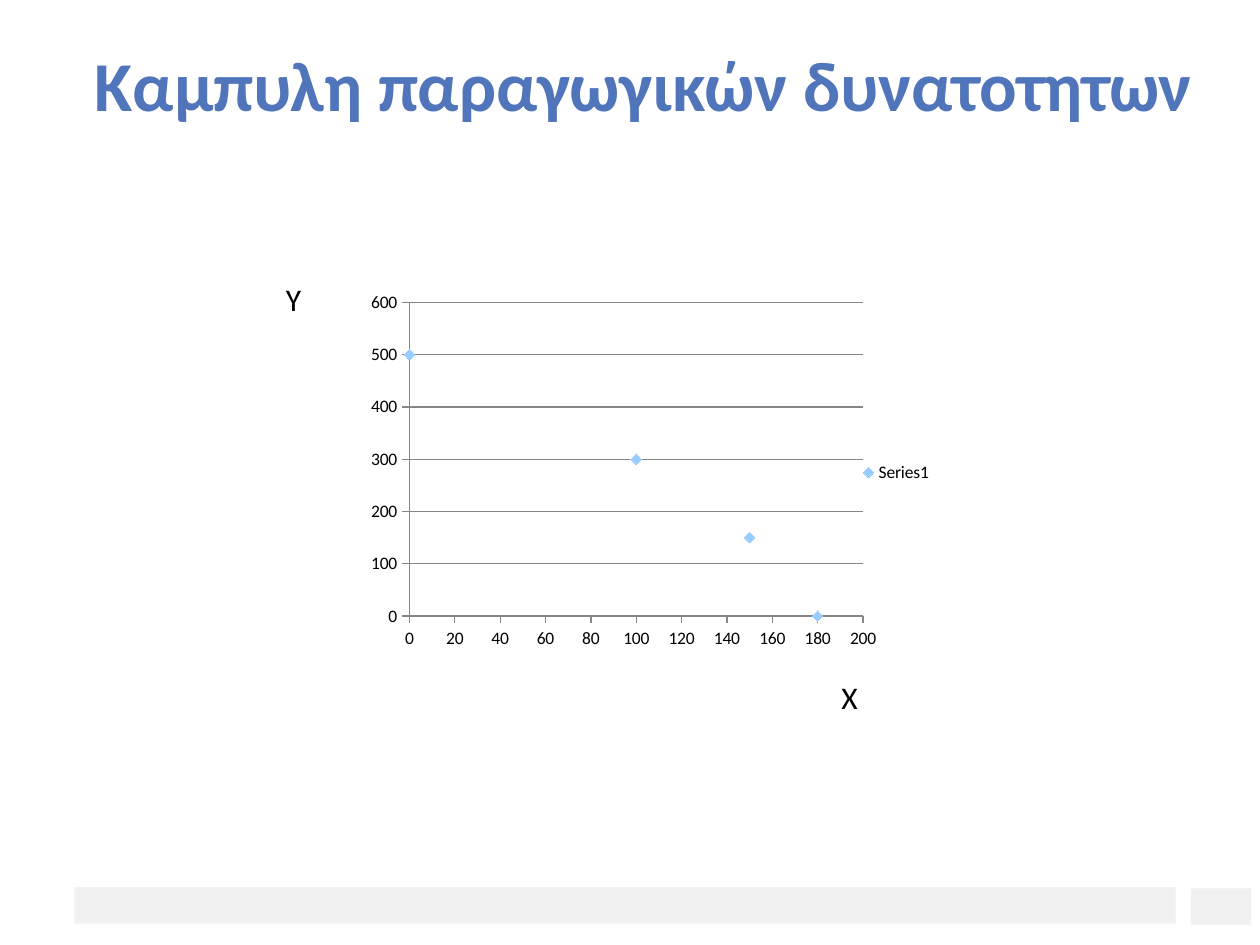
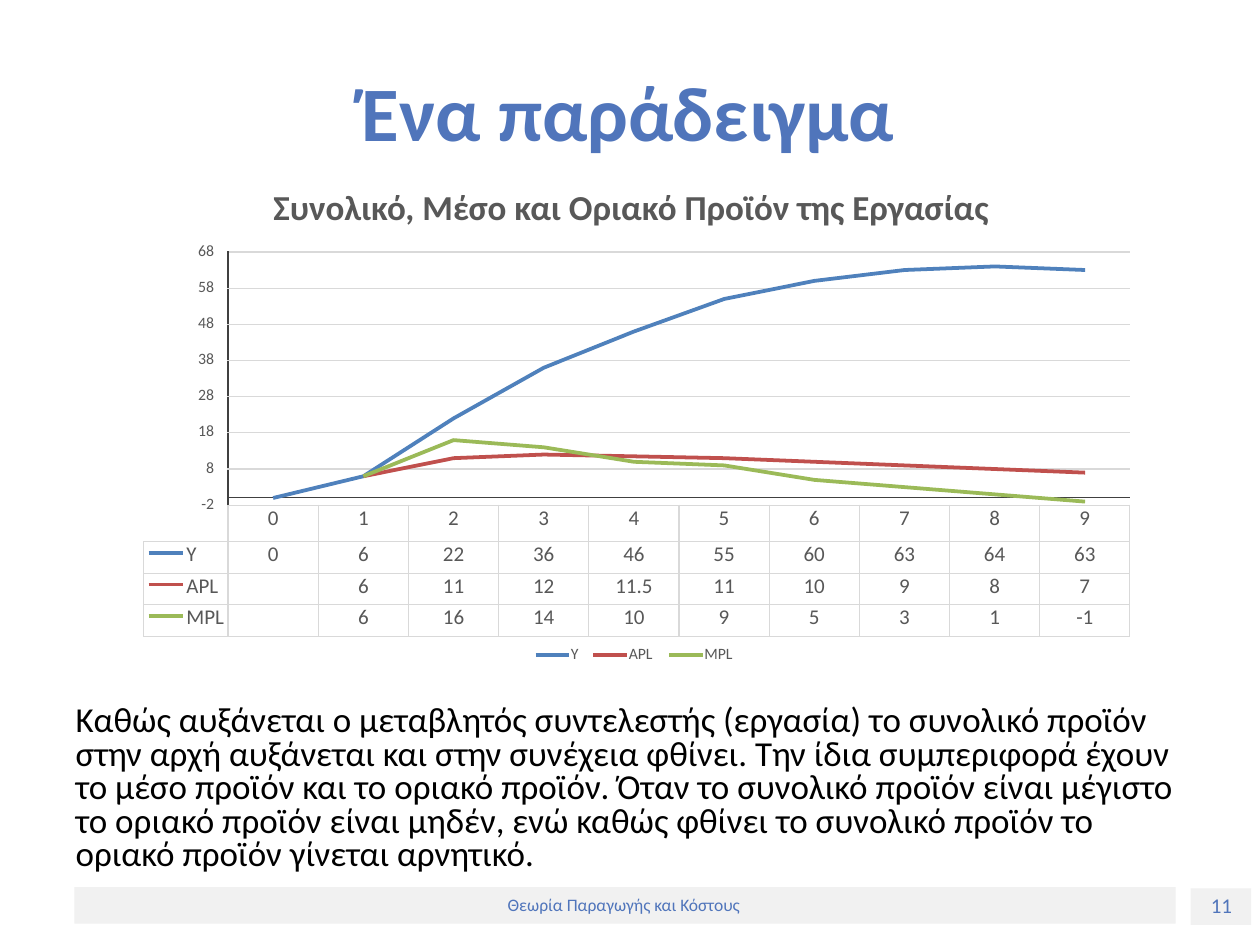
from dataclasses import dataclass

import lxml.etree
import pptx
import pptx.chart.data
import pptx.dml.color
import pptx.enum.chart
import pptx.enum.shapes
import pptx.enum.text
import pptx.oxml.ns
import pptx.util

PX = 9144
FONT = "Calibri"
ACCENT = "5075BB"
BLACK = "000000"
GRAY_TEXT = "585858"
BAND = "F1F1F1"
GRID = "D9D9D9"
AXIS = "404040"
CHART_GRID = "868686"
MARKER = "99CCFF"
CURVE_WIDTH = 2.16

LEFT = pptx.enum.text.PP_ALIGN.LEFT
CENTER = pptx.enum.text.PP_ALIGN.CENTER
RIGHT = pptx.enum.text.PP_ALIGN.RIGHT

TABLE_LEFT, TABLE_TOP = 114, 200
NAME_WIDTH, PLOT_WIDTH, PLOT_HEIGHT = 67, 716, 201
HEADER_HEIGHT, VALUE_HEIGHT = 29, 25
AXIS_MAX, AXIS_MIN, AXIS_STEP = 68, -2, 10
BAND_UNITS = [10] * 6 + [8, 2]
LABOUR = range(10)
PITCH = PLOT_WIDTH * PX // len(LABOUR)
UNIT = PLOT_HEIGHT * PX // (AXIS_MAX - AXIS_MIN)
NO_STYLE = "{2D5ABB26-0587-4C30-8999-92F81FD0307C}"


@dataclass(frozen=True)
class Box:
    left: int
    top: int
    width: int
    height: int

    def emu(self) -> tuple[int, int, int, int]:
        return self.left * PX, self.top * PX, self.width * PX, self.height * PX


@dataclass(frozen=True)
class Label:
    text: str
    box: Box
    size: int
    color: str
    bold: bool = False
    wrap: bool = False
    align: pptx.enum.text.PP_ALIGN = LEFT
    inset_x: int = 0
    inset_top: int = 1
    before: float = 1
    spacing: float | pptx.util.Length | None = None


@dataclass(frozen=True)
class Product:
    name: str
    color: str
    legend_left: int
    legend_width: int
    values: tuple[float | None, ...]


BANDS = [Box(945, 705, 48, 29), Box(59, 704, 874, 29)]

POSSIBILITIES_TITLE = Label("Καμπυλη παραγωγικών δυνατοτητων", Box(75, 33, 1000, 67), 40, ACCENT,
                            bold=True, wrap=True, inset_top=0, before=0)
AXIS_NAMES = [
    Label("Υ", Box(217, 217, 58, 40), 18, BLACK, wrap=True, inset_x=10, inset_top=5, before=0),
    Label("Χ", Box(658, 533, 92, 40), 18, BLACK, wrap=True, inset_x=10, inset_top=5, before=0),
]
POSSIBILITIES = [(0, 500), (100, 300), (150, 150), (180, 0)]

EXAMPLE_TITLE = Label("Ένα παράδειγμα", Box(287, 50, 426, 76), 44, ACCENT, bold=True)
EXAMPLE_LABELS = [
    Label("Συνολικό, Μέσο και Οριακό Προϊόν της Εργασίας", Box(217, 146, 570, 36), 20,
          GRAY_TEXT, bold=True),
    Label("Καθώς αυξάνεται ο μεταβλητός συντελεστής (εργασία) το συνολικό προϊόν "
          "στην αρχή αυξάνεται και στην συνέχεια φθίνει. Την ίδια συμπεριφορά έχουν "
          "το μέσο προϊόν και το οριακό προϊόν. Όταν το συνολικό προϊόν είναι μέγιστο "
          "το οριακό προϊόν είναι μηδέν, ενώ καθώς φθίνει το συνολικό προϊόν το "
          "οριακό προϊόν γίνεται αρνητικό.",
          Box(60, 552, 876, 143), 20, BLACK, wrap=True, inset_top=8, before=5.8, spacing=0.8),
    Label("\n".join(str(tick) for tick in range(AXIS_MAX, AXIS_MIN - 1, -AXIS_STEP)),
          Box(150, 190, 20, 220), 9, GRAY_TEXT, wrap=True, align=RIGHT, before=9.8),
    Label("11", Box(961, 711, 16, 20), 12, ACCENT, inset_top=0, before=0,
          spacing=pptx.util.Pt(12.4)),
    Label("Θεωρία Παραγωγής και Κόστους", Box(403, 712, 187, 17), 10, ACCENT, inset_top=0,
          before=0, spacing=pptx.util.Pt(10.4)),
]
PRODUCTS = [
    Product("Y", "4F81BC", 425, 9, (0, 6, 22, 36, 46, 55, 60, 63, 64, 63)),
    Product("APL", "C0504D", 471, 22, (None, 6, 11, 12, 11.5, 11, 10, 9, 8, 7)),
    Product("MPL", "9BBA58", 531, 25, (None, 6, 16, 14, 10, 9, 5, 3, 1, -1)),
]


def rgb(color: str) -> pptx.dml.color.RGBColor:
    return pptx.dml.color.RGBColor.from_string(color)


def style_line(line, color: str, width: float) -> None:
    line.color.rgb = rgb(color)
    line.width = pptx.util.Pt(width)


def style_font(font, size: float, color: str, bold: bool = False) -> None:
    font.name = FONT
    font.size = pptx.util.Pt(size)
    font.bold = bold
    font.color.rgb = rgb(color)


def write_label(shape, label: Label) -> None:
    shape.left, shape.top, shape.width, shape.height = label.box.emu()
    frame = shape.text_frame
    frame.text = label.text
    frame.word_wrap = label.wrap
    frame.auto_size = pptx.enum.text.MSO_AUTO_SIZE.NONE
    frame.vertical_anchor = pptx.enum.text.MSO_ANCHOR.TOP
    frame.margin_left = frame.margin_right = label.inset_x * PX
    frame.margin_top = label.inset_top * PX
    frame.margin_bottom = 0
    for index, para in enumerate(frame.paragraphs):
        para.alignment = label.align
        para.space_before = pptx.util.Pt(label.before if index or label.before < 9 else 1)
        para.line_spacing = label.spacing
        for span in para.runs:
            style_font(span.font, label.size, label.color, label.bold)


def add_label(page, label: Label) -> None:
    write_label(page.shapes.add_textbox(*label.box.emu()), label)


def add_page(deck, title: Label):
    page = deck.slides.add_slide(deck.slide_layouts[5])
    write_label(page.shapes.title, title)
    for box in BANDS:
        band = page.shapes.add_shape(pptx.enum.shapes.MSO_SHAPE.RECTANGLE, *box.emu())
        band.shadow.inherit = False
        band.fill.solid()
        band.fill.fore_color.rgb = rgb(BAND)
        band.line.fill.background()
    return page


def add_possibilities_chart(page) -> None:
    data = pptx.chart.data.XyChartData()
    series = data.add_series("Series1")
    for x, y in POSSIBILITIES:
        series.add_data_point(x, y)
    chart = page.shapes.add_chart(pptx.enum.chart.XL_CHART_TYPE.XY_SCATTER,
                                  *Box(250, 225, 500, 300).emu(), data).chart
    style_font(chart.font, 10, BLACK)
    chart.has_title = False
    chart.has_legend = True
    chart.legend.position = pptx.enum.chart.XL_LEGEND_POSITION.RIGHT
    chart.legend.include_in_layout = False
    plot = chart.plots[0]
    plot.vary_by_categories = False
    points = plot.series[0]
    points.format.line.fill.background()
    points.marker.style = pptx.enum.chart.XL_MARKER_STYLE.DIAMOND
    points.marker.size = 6
    points.marker.format.fill.solid()
    points.marker.format.fill.fore_color.rgb = rgb(MARKER)
    points.marker.format.line.fill.background()
    for axis, maximum, step in ((chart.category_axis, 200, 20), (chart.value_axis, 600, 100)):
        axis.minimum_scale, axis.maximum_scale, axis.major_unit = 0, maximum, step
        axis.has_title = False
        axis.major_tick_mark = pptx.enum.chart.XL_TICK_MARK.OUTSIDE
        axis.minor_tick_mark = pptx.enum.chart.XL_TICK_MARK.NONE
        axis.has_major_gridlines = axis is not chart.category_axis and maximum == 600
        style_line(axis.format.line, CHART_GRID, 0.75)
    style_line(chart.value_axis.major_gridlines.format.line, CHART_GRID, 0.75)
    place_plot(chart, {"x": 0.15, "y": 0.05, "w": 0.72, "h": 0.83})


def place_plot(chart, fractions: dict[str, float]) -> None:
    qn = pptx.oxml.ns.qn
    area = next(chart.element.iter(qn("c:plotArea")))
    for old in area.findall(qn("c:layout")):
        area.remove(old)
    layout = lxml.etree.Element(qn("c:layout"))
    area.insert(0, layout)
    manual = lxml.etree.SubElement(layout, qn("c:manualLayout"))
    settings = {"layoutTarget": "inner", "xMode": "edge", "yMode": "edge", **fractions}
    for name, value in settings.items():
        lxml.etree.SubElement(manual, qn(f"c:{name}"), val=str(value))


def set_borders(cell, **sides: str) -> None:
    qn = pptx.oxml.ns.qn
    properties = cell._tc.get_or_add_tcPr()
    for side in "LRTB":
        if side in sides:
            line = lxml.etree.SubElement(properties, qn(f"a:ln{side}"), w="9525")
            fill = lxml.etree.SubElement(line, qn("a:solidFill"))
            lxml.etree.SubElement(fill, qn("a:srgbClr"), val=sides[side])


def write_cell(cell, text: str, align=CENTER, indent: int = 0) -> None:
    cell.margin_left = indent * PX
    cell.margin_right = cell.margin_top = cell.margin_bottom = 0
    cell.fill.background()
    para = cell.text_frame.paragraphs[0]
    if not text:
        lxml.etree.SubElement(para._p, pptx.oxml.ns.qn("a:endParaRPr"), sz="100")
        return
    para.text = text
    para.alignment = align
    para.space_before = pptx.util.Pt(0.5)
    style_font(para.runs[0].font, 12, GRAY_TEXT)


def add_product_table(page) -> None:
    bands = len(BAND_UNITS)
    box = Box(TABLE_LEFT, TABLE_TOP, NAME_WIDTH + PLOT_WIDTH,
              PLOT_HEIGHT + HEADER_HEIGHT + VALUE_HEIGHT * len(PRODUCTS))
    frame = page.shapes.add_table(bands + 1 + len(PRODUCTS), 1 + len(LABOUR), *box.emu())
    next(frame.element.iter(pptx.oxml.ns.qn("a:tableStyleId"))).text = NO_STYLE
    table = frame.table
    table.first_row = table.horz_banding = False
    widths = [NAME_WIDTH * PX] + [PITCH] * len(LABOUR)
    heights = [units * UNIT for units in BAND_UNITS]
    heights += [HEADER_HEIGHT * PX] + [VALUE_HEIGHT * PX] * len(PRODUCTS)
    for column, width in zip(table.columns, widths):
        column.width = width
    for row, height in zip(table.rows, heights):
        row.height = height

    texts = [[""] * len(widths) for _ in BAND_UNITS]
    texts.append([""] + [str(amount) for amount in LABOUR])
    for product in PRODUCTS:
        texts.append([product.name] + ["" if v is None else str(v) for v in product.values])
    for r, row_texts in enumerate(texts):
        for c, text in enumerate(row_texts):
            cell = table.cell(r, c)
            if r > bands or (r == bands and c):
                set_borders(cell, L=GRID, R=GRID, T=GRID, B=GRID)
            elif c == 0:
                set_borders(cell, **({"R": AXIS} if r < bands else {}), B=GRID)
            else:
                set_borders(cell, **({"L": AXIS} if c == 1 else {}),
                            T=AXIS if r == bands - 1 else GRID,
                            B=AXIS if r == bands - 2 else GRID)
            write_cell(cell, text, CENTER if c else LEFT, 0 if c else 34)
    table.cell(0, 0).merge(table.cell(bands, 0))
    for r in range(bands):
        table.cell(r, 1).merge(table.cell(r, len(LABOUR)))


def add_key(page, left: int, top: int, color: str) -> None:
    key = page.shapes.add_connector(pptx.enum.shapes.MSO_CONNECTOR.STRAIGHT,
                                    left * PX, top * PX, (left + 27) * PX, top * PX)
    style_line(key.line, color, CURVE_WIDTH)
    lxml.etree.SubElement(key.element.spPr, pptx.oxml.ns.qn("a:effectLst"))


def add_curve(page, product: Product) -> None:
    plot_left = (TABLE_LEFT + NAME_WIDTH) * PX
    points = [(plot_left + PITCH * index + PITCH // 2,
               TABLE_TOP * PX + round((AXIS_MAX - value) * UNIT))
              for index, value in enumerate(product.values) if value is not None]
    builder = page.shapes.build_freeform(*points[0])
    builder.add_line_segments(points[1:], close=False)
    curve = builder.convert_to_shape()
    curve.shadow.inherit = False
    curve.fill.background()
    style_line(curve.line, product.color, CURVE_WIDTH)


def main() -> None:
    deck = pptx.Presentation()
    deck.slide_width, deck.slide_height = 1000 * PX, 750 * PX

    page = add_page(deck, POSSIBILITIES_TITLE)
    add_possibilities_chart(page)
    for label in AXIS_NAMES:
        add_label(page, label)

    page = add_page(deck, EXAMPLE_TITLE)
    add_product_table(page)
    for index, product in enumerate(PRODUCTS):
        add_key(page, TABLE_LEFT + 4, 439 + VALUE_HEIGHT * index, product.color)
        add_curve(page, product)
        add_key(page, product.legend_left, 520, product.color)
        add_label(page, Label(product.name, Box(product.legend_left + 28, 510,
                                                product.legend_width, 18), 9, GRAY_TEXT))
    for label in EXAMPLE_LABELS:
        add_label(page, label)
    deck.save("out.pptx")


if __name__ == "__main__":
    main()
